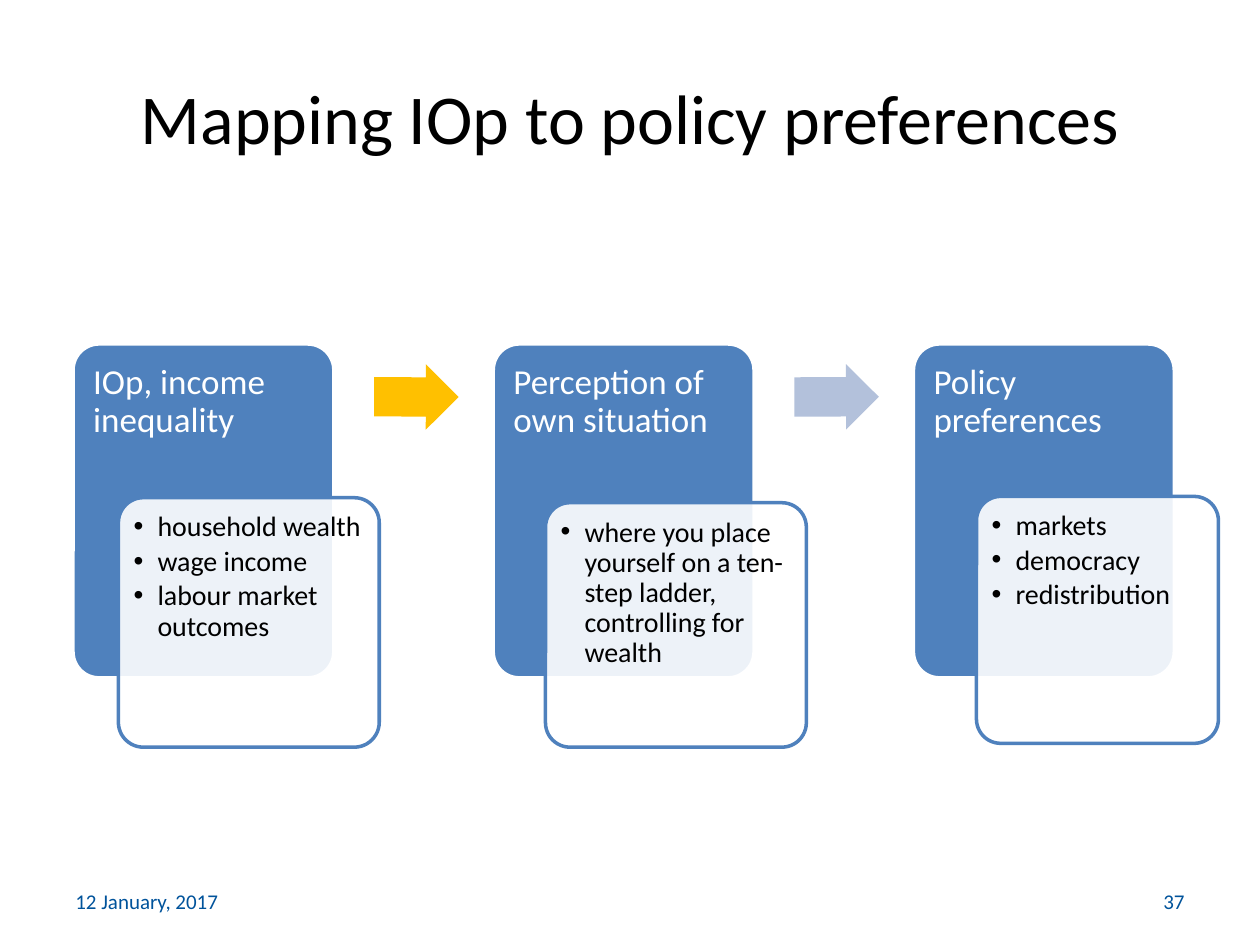
from dataclasses import dataclass

import pptx
import pptx.dml.color
import pptx.enum.shapes
import pptx.enum.text
import pptx.oxml
import pptx.oxml.ns
import pptx.util
from lxml import etree

SHAPE = pptx.enum.shapes.MSO_SHAPE
ALIGN = pptx.enum.text.PP_ALIGN
ANCHOR = pptx.enum.text.MSO_ANCHOR
COLS, ROWS = 100, 75


@dataclass(frozen=True)
class Theme:
    font: str = "Calibri"
    ink: str = "000000"
    paper: str = "FFFFFF"
    blue: str = "4F81BD"
    footer: str = "00539B"
    title_pt: float = 40
    head_pt: float = 20
    list_pt: float = 16
    footer_pt: float = 12
    line_pt: float = 2


@dataclass(frozen=True)
class Box:
    col: float
    row: float
    cols: float
    rows: float


@dataclass(frozen=True)
class Step:
    heading: str
    items: tuple[str, ...]
    detail: Box
    slot: int


@dataclass(frozen=True)
class Arrow:
    color: str
    rotation: float


T = Theme()
PITCH = 33.35
CARD = Box(5.8, 27.3, 20.7, 26.5)
HEADING_ROWS = 8.3
ARROW = Box(29.7, 28.9, 6.7, 5.2)
STEPS = (
    Step("IOp, income inequality",
         ("household wealth", "wage income", "labour market outcomes"),
         Box(9.4, 39.5, 20.7, 19.8), 1),
    Step("Perception of own situation",
         ("where you place yourself on a ten-step ladder, controlling for wealth",),
         Box(43.3, 39.9, 20.7, 19.4), 2),
    Step("Policy preferences", ("markets", "democracy", "redistribution"),
         Box(77.5, 39.4, 19.2, 19.6), 3),
)
ARROWS = (Arrow("FFC000", 0.2), Arrow("B3C1DB", -0.1))

prs = pptx.Presentation()
prs.slide_width = pptx.util.Inches(10)
prs.slide_height = pptx.util.Inches(7.5)


def rgb(value: str) -> pptx.dml.color.RGBColor:
    return pptx.dml.color.RGBColor.from_string(value)


def emu(b: Box) -> tuple[int, int, int, int]:
    x, y = prs.slide_width / COLS, prs.slide_height / ROWS
    return round(b.col * x), round(b.row * y), round(b.cols * x), round(b.rows * y)


def place(sp, b: Box) -> None:
    sp.left, sp.top, sp.width, sp.height = emu(b)


def write(sp, *lines: str, size: float, color: str = T.ink, align=ALIGN.LEFT,
          anchor=ANCHOR.TOP, insets=(0.1, 0.05, 0.1, 0.05), spacing: float = 1,
          after: float = 0, bullet: bool = False) -> None:
    tf = sp.text_frame
    tf.word_wrap = True
    tf.auto_size = pptx.enum.text.MSO_AUTO_SIZE.NONE
    tf.vertical_anchor = anchor
    tf.margin_left, tf.margin_top, tf.margin_right, tf.margin_bottom = map(
        pptx.util.Inches, insets)
    for i, text in enumerate(lines):
        p = tf.add_paragraph() if i else tf.paragraphs[0]
        p.alignment, p.line_spacing = align, spacing
        p.space_before, p.space_after = pptx.util.Pt(0), pptx.util.Pt(after)
        r = p.add_run()
        r.text = text
        r.font.name, r.font.size = T.font, pptx.util.Pt(size)
        r.font.bold, r.font.color.rgb = False, rgb(color)
        if bullet:
            add_bullet(p)


def add_bullet(p) -> None:
    pPr = p._p.get_or_add_pPr()
    indent = pptx.util.Inches(0.19)
    pPr.set("marL", str(indent))
    pPr.set("indent", str(-indent))
    etree.SubElement(pPr, pptx.oxml.ns.qn("a:buFont"), typeface="Arial")
    etree.SubElement(pPr, pptx.oxml.ns.qn("a:buChar"), char="•")


def add_shape(s, kind, b: Box, fill: str, line: str | None = None,
              adjust: tuple[float, ...] = (0.1,), alpha: int = 100):
    sp = s.shapes.add_shape(kind, *emu(b))
    sp.shadow.inherit = False
    for i, value in enumerate(adjust):
        sp.adjustments[i] = value
    sp.fill.solid()
    sp.fill.fore_color.rgb = rgb(fill)
    if alpha < 100:
        clr = sp._element.spPr.find(".//" + pptx.oxml.ns.qn("a:srgbClr"))
        etree.SubElement(clr, pptx.oxml.ns.qn("a:alpha"), val=str(alpha * 1000))
    if line:
        sp.line.color.rgb = rgb(line)
        sp.line.width = pptx.util.Pt(T.line_pt)
    else:
        sp.line.fill.background()
    return sp


def add_step(s, step: Step, shift: float) -> None:
    card = Box(CARD.col + shift, CARD.row, CARD.cols, CARD.rows)
    add_shape(s, SHAPE.ROUNDED_RECTANGLE, card, T.blue, T.paper)
    head = s.shapes.add_textbox(*emu(Box(card.col, card.row, card.cols, HEADING_ROWS)))
    write(head, step.heading, size=T.head_pt, color=T.paper, spacing=0.9,
          insets=(0.16, 0.16, 0.16, 0.08))
    add_shape(s, SHAPE.ROUNDED_RECTANGLE, step.detail, T.paper, T.blue, alpha=90)
    body = s.placeholders[step.slot]
    s.shapes._spTree.append(body._element)
    place(body, step.detail)
    write(body, *step.items, size=T.list_pt, spacing=0.9, after=2.4,
          insets=(0.12,) * 4, bullet=True)


def add_arrow(s, arrow: Arrow, shift: float) -> None:
    b = Box(ARROW.col + shift, ARROW.row, ARROW.cols, ARROW.rows)
    sp = add_shape(s, SHAPE.RIGHT_ARROW, b, arrow.color, adjust=(0.6, 0.5))
    sp.rotation = arrow.rotation


def main() -> None:
    s = prs.slides.add_slide(prs.slide_layouts[4])
    unused = s.placeholders[4]._element
    unused.getparent().remove(unused)

    place(s.shapes.title, Box(5, 3, 90, 12.5))
    write(s.shapes.title, "Mapping IOp to policy preferences", size=T.title_pt,
          align=ALIGN.CENTER, anchor=ANCHOR.MIDDLE)
    for text, col, align in (("12 January, 2017", 5, ALIGN.LEFT),
                             ("37", 71.7, ALIGN.RIGHT)):
        sp = s.shapes.add_textbox(*emu(Box(col, 69.5, 23.3, 4)))
        write(sp, text, size=T.footer_pt, color=T.footer, align=align,
              anchor=ANCHOR.MIDDLE)

    for i, step in enumerate(STEPS):
        add_step(s, step, i * PITCH)
    for i, arrow in enumerate(ARROWS):
        add_arrow(s, arrow, i * PITCH)
    prs.save("out.pptx")


if __name__ == "__main__":
    main()
